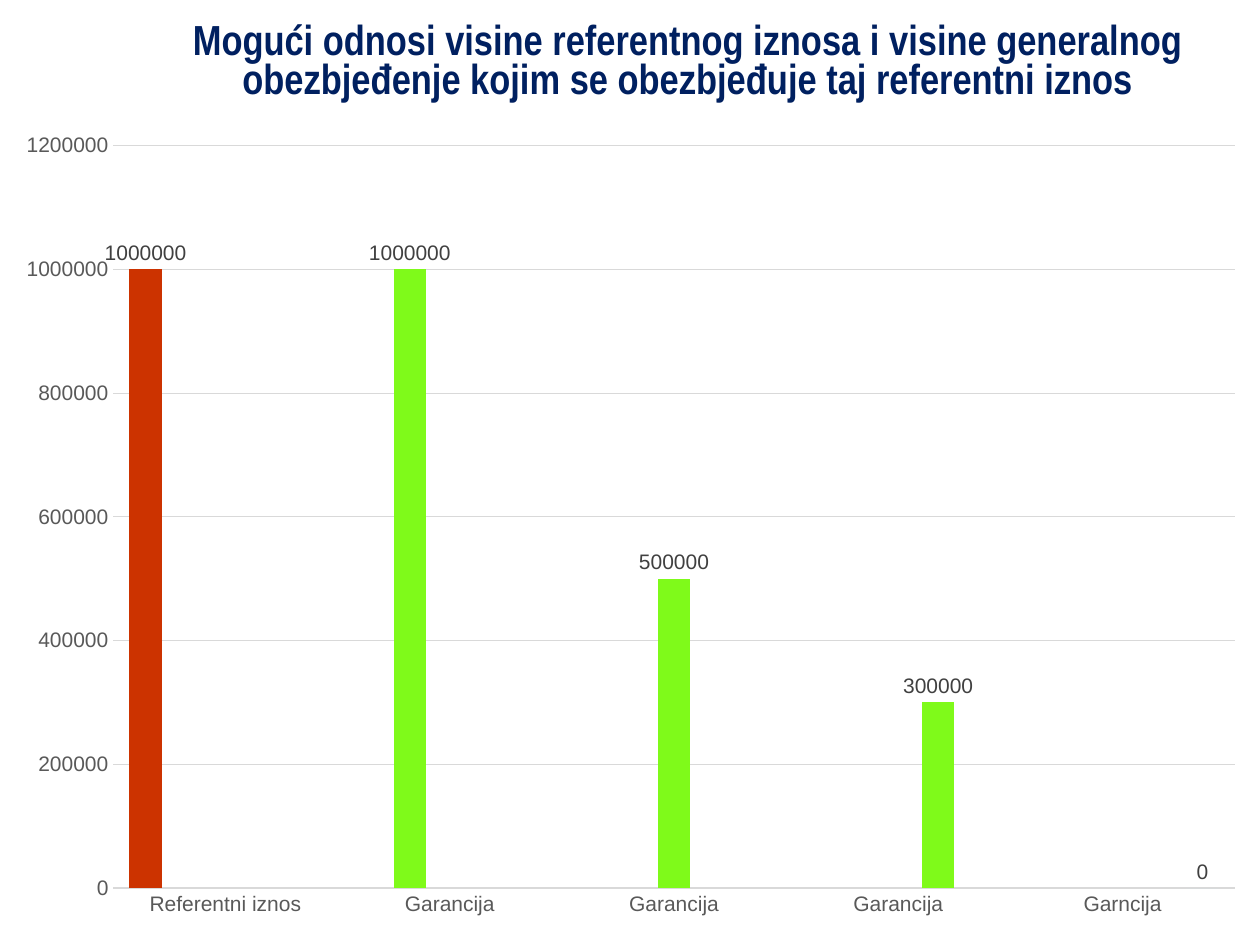
from lxml import etree
from pptx import Presentation
from pptx.chart.data import CategoryChartData
from pptx.dml.color import RGBColor
from pptx.enum.chart import XL_CHART_TYPE, XL_LABEL_POSITION, XL_TICK_MARK
from pptx.oxml.ns import qn
from pptx.util import Pt

COLUMNS = XL_CHART_TYPE.COLUMN_CLUSTERED
OUTSIDE_END = XL_LABEL_POSITION.OUTSIDE_END
NO_TICK = XL_TICK_MARK.NONE

BLACK = RGBColor(0x00, 0x00, 0x00)
NAVY = RGBColor(0x00, 0x20, 0x60)
RED = RGBColor(0xCC, 0x33, 0x00)
GREEN = RGBColor(0x7F, 0xFA, 0x1A)
PALE_BLUE = RGBColor(0xD0, 0xE8, 0xEB)
AXIS_GREY = RGBColor(0x59, 0x59, 0x59)
LABEL_GREY = RGBColor(0x40, 0x40, 0x40)
GRID_GREY = RGBColor(0xD9, 0xD9, 0xD9)

EMU_PER_PX = 914400 // 126
PAGE_WIDTH, PAGE_HEIGHT = 1260, 945
CHART_WIDTH, CHART_HEIGHT = 1260, 935

TITLE_LINES = [
    "Mogući odnosi visine referentnog iznosa i visine generalnog",
    "obezbjeđenje kojim se obezbjeđuje taj referentni iznos",
]
CATEGORIES = ["Referentni iznos", "Garancija", "Garancija", "Garancija", "Garncija"]
AMOUNTS = [1000000, 1000000, 500000, 300000, 0]
COLORS = [RED, GREEN, GREEN, GREEN, PALE_BLUE]


def px(length):
    return length * EMU_PER_PX


def style_font(font, size, color, name="Arial", bold=False):
    font.size = Pt(size)
    font.color.rgb = color
    font.name = name
    font.bold = bold


def write_text(para, text, line_spacing=1.0, **font_format):
    para.line_spacing = line_spacing
    span = para.add_run()
    span.text = text
    style_font(span.font, **font_format)


def place(part, **fractions):
    layout = part.find(qn("c:layout"))
    if layout is None:
        layout = etree.Element(qn("c:layout"))
        part.insert(0, layout)
    manual = etree.SubElement(layout, qn("c:manualLayout"))
    if "w" in fractions:
        etree.SubElement(manual, qn("c:layoutTarget")).set("val", "inner")
    for side in ("xMode", "yMode"):
        etree.SubElement(manual, qn(f"c:{side}")).set("val", "edge")
    for side, fraction in fractions.items():
        etree.SubElement(manual, qn(f"c:{side}")).set("val", str(fraction))


class SlideBuilder:
    def __init__(self, deck):
        self.page = deck.slides.add_slide(deck.slide_layouts[6])
        self.title_format = dict(size=24, color=NAVY, name="Arial Narrow", bold=True)
        self.axis_format = dict(size=12, color=AXIS_GREY)
        self.label_format = dict(size=12, color=LABEL_GREY)

    def add_column_chart(self, left, top, width, height):
        data = CategoryChartData()
        data.categories = CATEGORIES
        for index, amount in enumerate(AMOUNTS):
            values = [None] * len(AMOUNTS)
            values[index] = amount
            data.add_series(f"Series {index + 1}", values)
        frame = self.page.shapes.add_chart(
            COLUMNS, px(left), px(top), px(width), px(height), data)
        chart = frame.chart
        chart.has_legend = False
        style_font(chart.font, 10, BLACK)
        plot = chart.plots[0]
        plot.gap_width = 100
        plot.overlap = -24
        plot.vary_by_categories = False
        place(chart.element.find(".//" + qn("c:plotArea")),
              x=0.09, y=0.156, w=0.89, h=0.794)
        return chart

    def add_title(self, chart, lines):
        chart.has_title = True
        text_frame = chart.chart_title.text_frame
        for index, line in enumerate(lines):
            para = text_frame.add_paragraph() if index else text_frame.paragraphs[0]
            write_text(para, line, line_spacing=0.85, **self.title_format)
        place(chart.element.find(".//" + qn("c:title")), x=0.15, y=0.02)

    def style_axes(self, chart):
        for axis in (chart.category_axis, chart.value_axis):
            axis.major_tick_mark = NO_TICK
            axis.minor_tick_mark = NO_TICK
            style_font(axis.tick_labels.font, **self.axis_format)
        base_line = chart.category_axis.format.line
        base_line.color.rgb = GRID_GREY
        base_line.width = Pt(1)
        amount_axis = chart.value_axis
        amount_axis.minimum_scale = 0
        amount_axis.maximum_scale = 1200000
        amount_axis.major_unit = 200000
        amount_axis.format.line.fill.background()
        grid_line = amount_axis.major_gridlines.format.line
        grid_line.color.rgb = GRID_GREY
        grid_line.width = Pt(0.75)

    def style_series(self, chart, colors):
        for series, color in zip(chart.plots[0].series, colors):
            series.invert_if_negative = False
            series.format.fill.solid()
            series.format.fill.fore_color.rgb = color
            labels = series.data_labels
            labels.show_value = True
            labels.position = OUTSIDE_END
            style_font(labels.font, **self.label_format)


def main():
    deck = Presentation()
    deck.slide_width = px(PAGE_WIDTH)
    deck.slide_height = px(PAGE_HEIGHT)
    builder = SlideBuilder(deck)
    chart = builder.add_column_chart(0, 0, CHART_WIDTH, CHART_HEIGHT)
    builder.add_title(chart, TITLE_LINES)
    builder.style_axes(chart)
    builder.style_series(chart, COLORS)
    deck.save("out.pptx")


if __name__ == "__main__":
    main()
